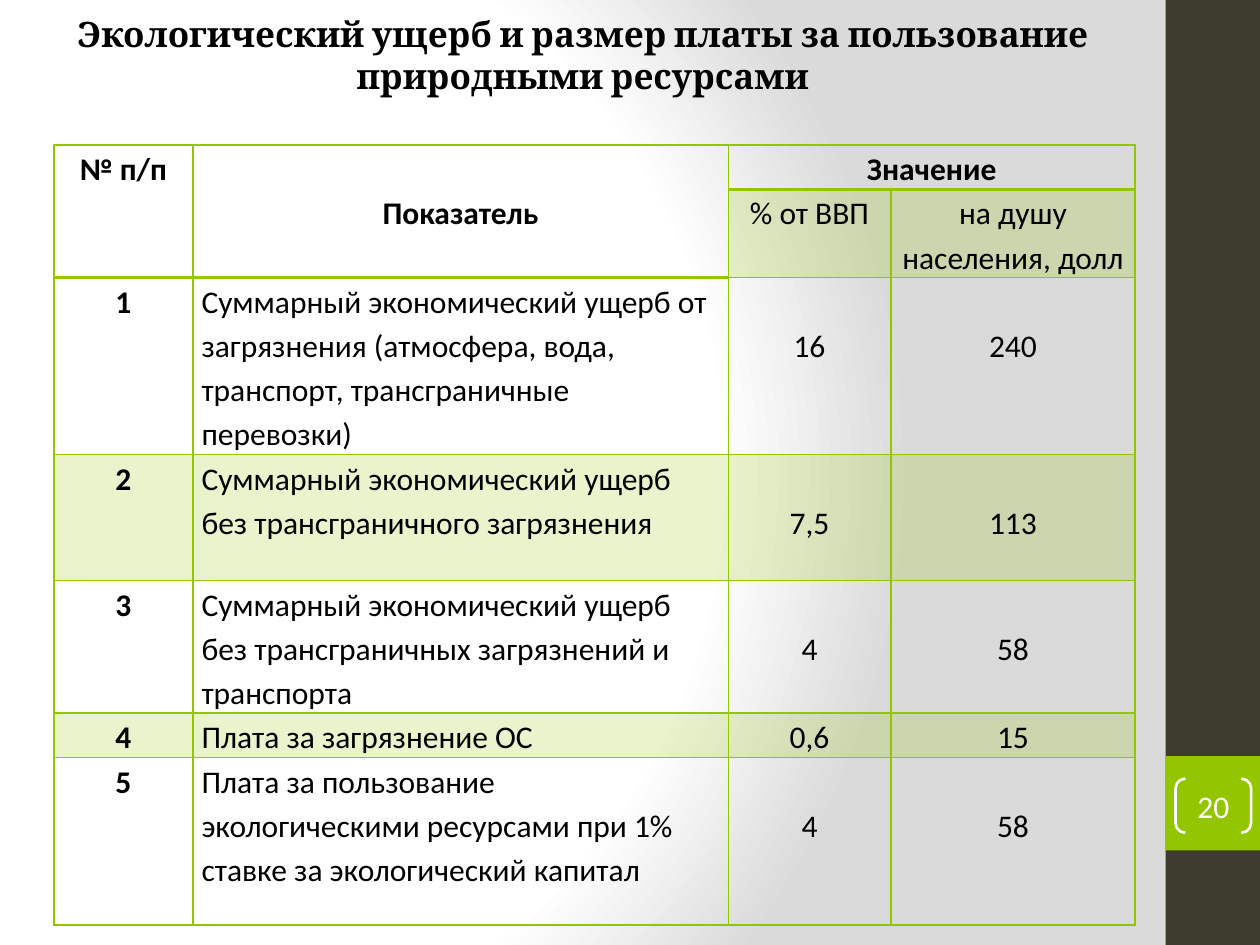
import pptx
import pptx.dml.color
import pptx.enum.shapes
import pptx.enum.text
import pptx.oxml
import pptx.oxml.ns
import pptx.util
from dataclasses import dataclass

Inches = pptx.util.Inches
Pt = pptx.util.Pt
SHAPE = pptx.enum.shapes.MSO_SHAPE
ALIGN = pptx.enum.text.PP_ALIGN
ANCHOR = pptx.enum.text.MSO_ANCHOR
NS = pptx.oxml.ns.nsdecls("a")
GREEN, DARK, BLACK, WHITE = "94C600", "3E3D2D", "000000", "FFFFFF"
LINE_HEIGHT = 0.35
COLUMNS = (1.1, 4.25, 1.29, 1.94)


@dataclass(frozen=True)
class Header:
    row: int
    col: int
    row_span: int
    col_span: int
    text: str
    bold: bool = True
    tinted: bool = False
    skipped_lines: int = 0


@dataclass(frozen=True)
class Indicator:
    name: str
    gdp_share: str
    per_capita: str
    height: float
    skipped_lines: int = 1


HEADERS = (
    Header(0, 0, 2, 1, "№ п/п"),
    Header(0, 1, 2, 1, "Показатель", skipped_lines=1),
    Header(0, 2, 1, 2, "Значение"),
    Header(1, 2, 1, 1, "% от ВВП", bold=False, tinted=True),
    Header(1, 3, 1, 1, "на душу населения, долл", bold=False, tinted=True),
)
INDICATORS = (
    Indicator("Суммарный экономический ущерб от загрязнения (атмосфера, вода, "
              "транспорт, трансграничные перевозки)", "16", "240", 1.33),
    Indicator("Суммарный экономический ущерб без трансграничного загрязнения",
              "7,5", "113", 1),
    Indicator("Суммарный экономический ущерб без трансграничных загрязнений и "
              "транспорта", "4", "58", 1),
    Indicator("Плата за загрязнение ОС", "0,6", "15", 0.33, skipped_lines=0),
    Indicator("Плата за пользование экологическими ресурсами при 1% ставке за "
              "экологический капитал", "4", "58", 1.33),
)


def color(value: str) -> pptx.dml.color.RGBColor:
    return pptx.dml.color.RGBColor.from_string(value)


def write(tf, text: str, size: float, font: str, hex_color: str,
          bold: bool = False, align=ALIGN.CENTER) -> None:
    tf.text = text
    tf.word_wrap = True
    p = tf.paragraphs[0]
    p.alignment = align
    r = p.runs[0]
    r.font.size = Pt(size)
    r.font.name = font
    r.font.bold = bold
    r.font.color.rgb = color(hex_color)


def set_background(s) -> None:
    s.background.fill.solid()
    bg = s._element.cSld.bg.bgPr
    stops = "".join(
        f'<a:gs pos="{pos * 1000}"><a:srgbClr val="{value}"/></a:gs>'
        for pos, value in ((0, WHITE), (75, WHITE), (100, "DADADA")))
    bg.replace(bg[0], pptx.oxml.parse_xml(
        f'<a:gradFill {NS} rotWithShape="1"><a:gsLst>{stops}</a:gsLst>'
        '<a:path path="circle"><a:fillToRect l="20000" t="50000" r="100000" '
        'b="50000"/></a:path></a:gradFill>'))


def add_block(s, top: float, height: float, fill: str) -> None:
    sp = s.shapes.add_shape(SHAPE.RECTANGLE, Inches(9.25), Inches(top),
                            Inches(0.75), Inches(height))
    sp.shadow.inherit = False
    sp.fill.solid()
    sp.fill.fore_color.rgb = color(fill)
    sp.line.fill.background()


def style_cell(cell, tinted: bool, bottom: float) -> None:
    if tinted:
        cell.fill.solid()
        cell.fill.fore_color.rgb = color(GREEN)
    else:
        cell.fill.background()
    tc_pr = cell._tc.get_or_add_tcPr()
    for clr in tc_pr.iter(pptx.oxml.ns.qn("a:srgbClr")):
        clr.append(pptx.oxml.parse_xml(f'<a:alpha {NS} val="20000"/>'))
    for i, (side, width) in enumerate(zip("LRTB", (1, 1, 1, bottom))):
        tc_pr.insert(i, pptx.oxml.parse_xml(
            f'<a:ln{side} {NS} w="{Pt(width)}"><a:solidFill>'
            f'<a:srgbClr val="{GREEN}"/></a:solidFill></a:ln{side}>'))


def write_cell(cell, text: str, bold: bool = False, skipped_lines: int = 0,
               align=ALIGN.CENTER) -> None:
    cell.margin_left = cell.margin_right = Inches(0.07)
    cell.margin_top = Inches(skipped_lines * LINE_HEIGHT)
    cell.margin_bottom = 0
    write(cell.text_frame, text, 18, "Calibri", BLACK, bold, align)
    cell.text_frame.paragraphs[0].line_spacing = 1.15


def add_damage_table(s) -> None:
    heights = [0.33, 0.66] + [item.height for item in INDICATORS]
    table = s.shapes.add_table(
        len(heights), len(COLUMNS), Inches(0.43), Inches(1.15),
        Inches(sum(COLUMNS)), Inches(sum(heights))).table
    table.first_row = table.horz_banding = False
    for column, width in zip(table.columns, COLUMNS):
        column.width = Inches(width)
    for row, height in zip(table.rows, heights):
        row.height = Inches(height)

    for h in HEADERS:
        last_row, last_col = h.row + h.row_span - 1, h.col + h.col_span - 1
        cell = table.cell(h.row, h.col)
        if (last_row, last_col) != (h.row, h.col):
            cell.merge(table.cell(last_row, last_col))
        for row in range(h.row, last_row + 1):
            for col in range(h.col, last_col + 1):
                style_cell(table.cell(row, col), h.tinted, 2 if h.bold else 1)
        write_cell(cell, h.text, h.bold, h.skipped_lines)

    for number, item in enumerate(INDICATORS, start=1):
        cells = [table.cell(number + 1, col) for col in range(len(COLUMNS))]
        for cell in cells:
            style_cell(cell, number % 2 == 0, 1)
        write_cell(cells[0], str(number), bold=True)
        write_cell(cells[1], item.name, align=ALIGN.LEFT)
        for cell, value in zip(cells[2:], (item.gdp_share, item.per_capita)):
            write_cell(cell, value, skipped_lines=item.skipped_lines)


def add_title(s) -> None:
    sp = s.shapes.add_textbox(Inches(0), Inches(0.05), Inches(9.25), Inches(0.77))
    tf = sp.text_frame
    write(tf, "Экологический ущерб и размер платы за пользование природными "
          "ресурсами", 20, "Cambria", BLACK, bold=True)
    tf.vertical_anchor = ANCHOR.MIDDLE
    tf.auto_size = pptx.enum.text.MSO_AUTO_SIZE.SHAPE_TO_FIT_TEXT


def add_page_number(s) -> None:
    sp = s.shapes.add_shape(SHAPE.DOUBLE_BRACKET, Inches(9.33), Inches(6.18),
                            Inches(0.6), Inches(0.43))
    sp.shadow.inherit = False
    sp.adjustments[0] = 0.18
    sp.fill.background()
    sp.line.color.rgb = color(WHITE)
    sp.line.width = Pt(1.5)
    tf = sp.text_frame
    tf.margin_left = tf.margin_right = tf.margin_top = tf.margin_bottom = 0
    write(tf, "20", 18, "Calibri", WHITE)
    tf.vertical_anchor = ANCHOR.MIDDLE


def main() -> None:
    prs = pptx.Presentation()
    prs.slide_width, prs.slide_height = Inches(10), Inches(7.5)
    s = prs.slides.add_slide(prs.slide_layouts[6])
    set_background(s)
    add_block(s, 0, 7.5, DARK)
    add_block(s, 6, 0.75, GREEN)
    add_damage_table(s)
    add_title(s)
    add_page_number(s)
    prs.save("out.pptx")


if __name__ == "__main__":
    main()
